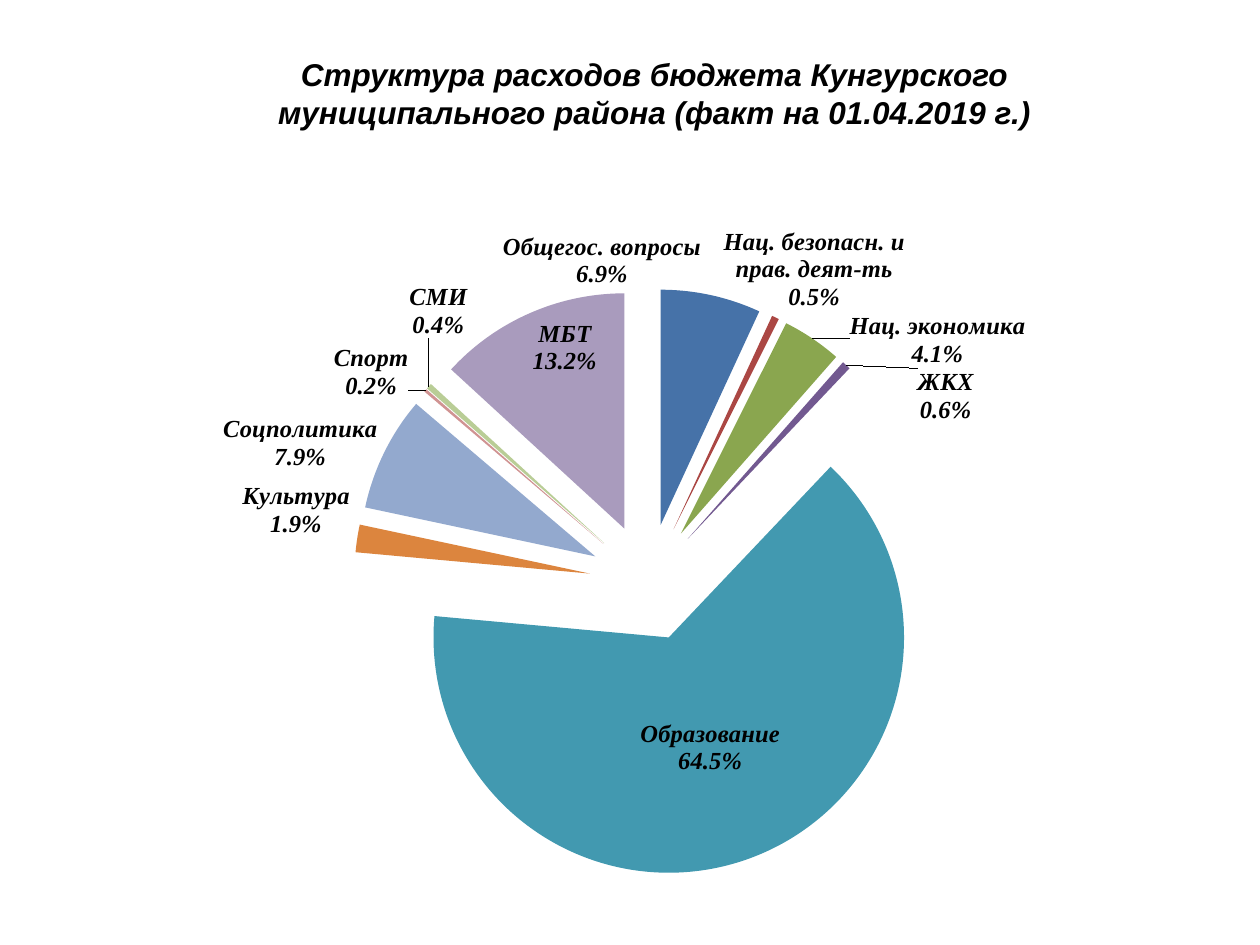
from copy import deepcopy
from dataclasses import dataclass

from lxml.etree import SubElement
from pptx import Presentation
from pptx.chart.data import CategoryChartData
from pptx.dml.color import RGBColor
from pptx.enum.chart import XL_CHART_TYPE as ChartType, XL_LABEL_POSITION as LabelPosition
from pptx.enum.text import MSO_AUTO_SIZE as AutoSize, PP_ALIGN as Align
from pptx.oxml.ns import qn
from pptx.util import Pt


@dataclass(frozen=True)
class Theme:
    text: str = "000000"
    title_font: str = "Arial"
    chart_font: str = "Calibri"
    label_font: str = "Times New Roman"
    title_size: int = 18
    chart_size: int = 10
    label_size: int = 14
    slices: tuple = ("4672A8", "AB4744", "8AA64F", "725990", "4299B0",
                     "DC853E", "93A9CE", "D09392", "B9CD96", "A99BBD")


TITLE = "Структура расходов бюджета Кунгурского муниципального района (факт на 01.04.2019 г.)"
EXPENSES = {
    "Общегос. вопросы": 6.9,
    "Нац. безопасн. и прав. деят-ть": 0.5,
    "Нац. экономика": 4.1,
    "ЖКХ": 0.6,
    "Образование": 64.5,
    "Культура": 1.9,
    "Соцполитика": 7.9,
    "Спорт": 0.2,
    "СМИ": 0.4,
    "МБТ": 13.2,
}
# Label shifts as fractions of the chart's width and height
LABEL_SHIFTS = {
    "Общегос. вопросы": (-0.19, 0),
    "Нац. безопасн. и прав. деят-ть": (-0.05, 0),
    "Нац. экономика": (0.03, 0.05),
    "ЖКХ": (0.06, 0.09),
    "Соцполитика": (0, 0.03),
    "Спорт": (-0.01, 0.02),
    "СМИ": (0.04, -0.06),
}
INNER_LABELS = {"Образование": "ctr", "МБТ": "inEnd"}
PLOT_AREA = {"x": 0.07, "y": 0.16, "w": 0.85, "h": 0.83}
EXPLOSION = 25


def add_value(parent, tag, value):
    return SubElement(parent, qn(f"c:{tag}"), val=str(value))


def add_manual_layout(layout, **values):
    manual = SubElement(layout, qn("c:manualLayout"))
    for tag, value in values.items():
        add_value(manual, tag, value)


class SlideBuilder:
    def __init__(self, slide, theme):
        self.slide = slide
        self.theme = theme

    def style(self, font, name, size, strong=True):
        font.name = name
        font.size = Pt(size)
        font.bold = font.italic = strong
        font.color.rgb = RGBColor.from_string(self.theme.text)

    def title(self, text, left, top, width, height):
        box = self.slide.shapes.add_textbox(Pt(left), Pt(top), Pt(width), Pt(height))
        frame = box.text_frame
        frame.word_wrap = True
        frame.auto_size = AutoSize.SHAPE_TO_FIT_TEXT
        frame.text = text
        paragraph = frame.paragraphs[0]
        paragraph.alignment = Align.CENTER
        self.style(paragraph.runs[0].font, self.theme.title_font, self.theme.title_size)

    def pie(self, values, left, top, width, height):
        data = CategoryChartData()
        data.categories = list(values)
        data.add_series("Series 1", list(values.values()))
        chart = self.slide.shapes.add_chart(
            ChartType.PIE, Pt(left), Pt(top), Pt(width), Pt(height), data).chart
        chart.has_legend = chart.has_title = False
        self.style(chart.font, self.theme.chart_font, self.theme.chart_size, strong=False)
        plot = chart.plots[0]
        plot.vary_by_categories = True
        series = plot.series[0]
        for index, color in enumerate(self.theme.slices):
            fill = series.points[index].format.fill
            fill.solid()
            fill.fore_color.rgb = RGBColor.from_string(color)
        self.explode(series)
        self.place_plot(chart)
        self.pie_labels(series, list(values))

    def explode(self, series):
        element = series._element
        explosion = add_value(element, "explosion", EXPLOSION)
        element.find(qn("c:dPt")).addprevious(explosion)

    def place_plot(self, chart):
        area = chart._chartSpace.find(".//" + qn("c:plotArea"))
        layout = area.find(qn("c:layout"))
        if layout is None:
            layout = SubElement(area, qn("c:layout"))
            area.insert(0, layout)
        add_manual_layout(layout, layoutTarget="inner", xMode="edge", yMode="edge", **PLOT_AREA)

    def pie_labels(self, series, categories):
        labels = series.data_labels
        labels.show_value = labels.show_category_name = True
        labels.show_percentage = False
        labels.number_format = '0.0"%"'
        labels.number_format_is_linked = False
        labels.position = LabelPosition.OUTSIDE_END
        self.style(labels.font, self.theme.label_font, self.theme.label_size)
        group = labels._element
        separator = SubElement(group, qn("c:separator"))
        separator.text = "\n"
        leader_lines = group.find(qn("c:showLeaderLines"))
        if leader_lines is None:
            leader_lines = add_value(group, "showLeaderLines", 1)
        leader_lines.set("val", "1")
        group.append(leader_lines)
        shared = [child for child in group if child is not leader_lines]
        for index, category in enumerate(categories):
            if category in LABEL_SHIFTS or category in INNER_LABELS:
                shared[0].addprevious(self.point_label(group, shared, index, category))

    def point_label(self, group, shared, index, category):
        """Repeat the shared label settings for one slice, with its own place."""
        label = SubElement(group, qn("c:dLbl"))
        add_value(label, "idx", index)
        if category in LABEL_SHIFTS:
            x, y = LABEL_SHIFTS[category]
            add_manual_layout(SubElement(label, qn("c:layout")), x=x, y=y)
        label.extend(deepcopy(child) for child in shared)
        if category in INNER_LABELS:
            label.find(qn("c:dLblPos")).set("val", INNER_LABELS[category])
        return label


def main():
    presentation = Presentation()
    presentation.slide_width, presentation.slide_height = Pt(720), Pt(540)
    slide = presentation.slides.add_slide(presentation.slide_layouts[6])
    builder = SlideBuilder(slide, Theme())
    builder.pie(EXPENSES, 58, 100, 631, 405)
    builder.title(TITLE, 124, 28, 500, 51)
    presentation.save("out.pptx")


if __name__ == "__main__":
    main()
